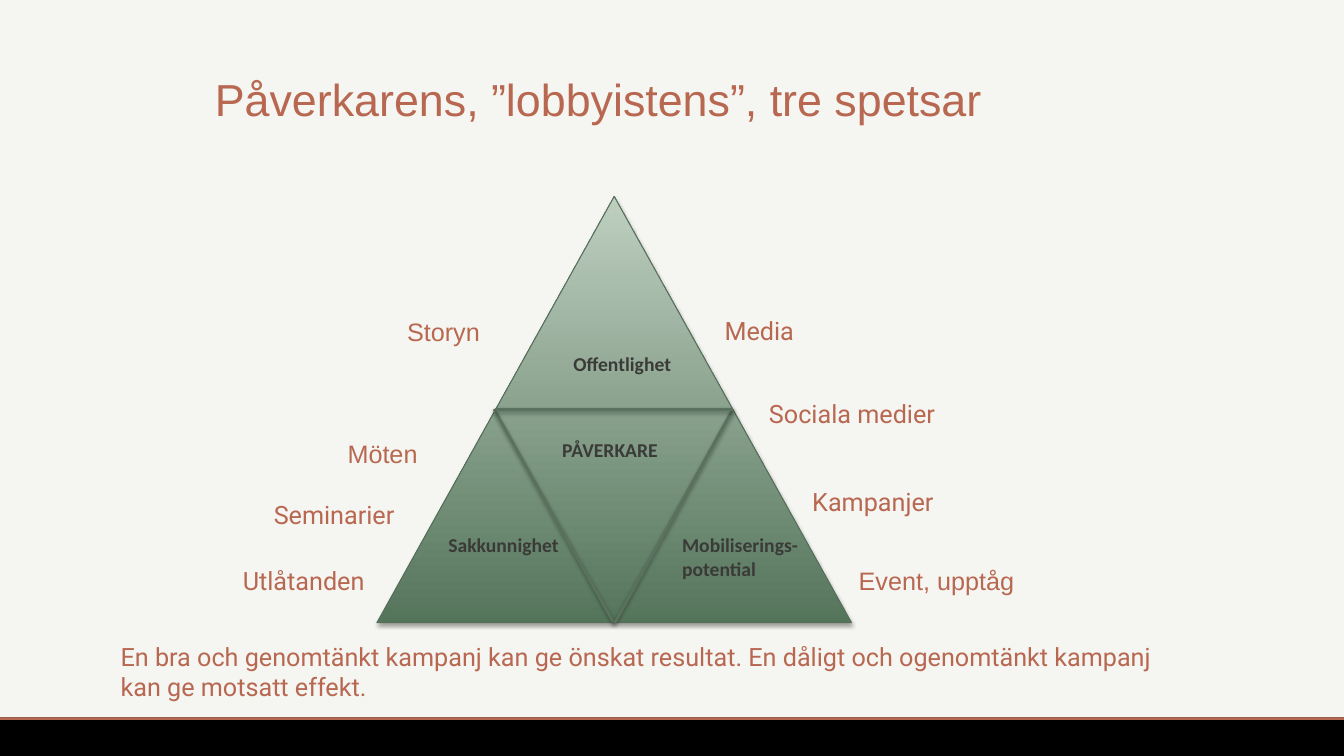
import lxml.etree
import pptx
import pptx.dml.color
import pptx.enum.dml
import pptx.enum.shapes
import pptx.enum.text
import pptx.oxml.ns
import pptx.util

Cm = pptx.util.Cm
Pt = pptx.util.Pt
RGBColor = pptx.dml.color.RGBColor
MSO_SHAPE = pptx.enum.shapes.MSO_SHAPE

PAPER = RGBColor(0xF5, 0xF5, 0xF1)
BLACK = RGBColor(0x00, 0x00, 0x00)
RUST = RGBColor(0xB8, 0x68, 0x51)
CHARCOAL = RGBColor(0x3A, 0x3A, 0x37)
DARK_GREEN = RGBColor(0x55, 0x75, 0x5B)
PALE_GREEN = RGBColor(0xBE, 0xCF, 0xC0)
EDGE_GREEN = RGBColor(0x56, 0x6F, 0x5B)
DIVIDER_GREEN = RGBColor(0x59, 0x71, 0x5D)


def cast_shadow(shape, opacity, distance):
    """Give the shape a soft black shadow straight below; opacity is in percent."""
    qn = pptx.oxml.ns.qn
    effects = lxml.etree.SubElement(shape._element.spPr, qn("a:effectLst"))
    shadow = lxml.etree.SubElement(
        effects, qn("a:outerShdw"), blurRad=str(Pt(3.1)), dist=str(Pt(distance)),
        dir="5400000", rotWithShape="0")
    color = lxml.etree.SubElement(shadow, qn("a:srgbClr"), val=str(BLACK))
    lxml.etree.SubElement(color, qn("a:alpha"), val=str(opacity * 1000))


def add_text(shapes, lines, left, top, width, height, font, size, color, bold=False, wrap=True):
    box = shapes.add_textbox(Cm(left), Cm(top), Cm(width), Cm(height))
    frame = box.text_frame
    frame.word_wrap = wrap
    frame.auto_size = pptx.enum.text.MSO_AUTO_SIZE.SHAPE_TO_FIT_TEXT
    for index, line in enumerate(lines):
        para = frame.add_paragraph() if index else frame.paragraphs[0]
        span = para.add_run()
        span.text = line
        span.font.name = font
        span.font.size = Pt(size)
        span.font.bold = bold
        span.font.color.rgb = color


deck = pptx.Presentation()
deck.slide_width = Cm(33.87)
deck.slide_height = Cm(19.05)
page = deck.slides.add_slide(deck.slide_layouts[5])
page.background.fill.solid()
page.background.fill.fore_color.rgb = PAPER

# Bottom band with its thin rust edge
for height, color in ((0.97, BLACK), (0.06, RUST)):
    band = page.shapes.add_shape(MSO_SHAPE.RECTANGLE, 0, Cm(18.08), deck.slide_width, Cm(height))
    band.shadow.inherit = False
    band.fill.solid()
    band.fill.fore_color.rgb = color
    band.line.fill.background()

title = page.shapes.title
title.left, title.top, title.width, title.height = Cm(5.16), Cm(1.68), Cm(20.68), Cm(1.63)
title.text_frame.vertical_anchor = pptx.enum.text.MSO_ANCHOR.MIDDLE
title_para = title.text_frame.paragraphs[0]
title_para.alignment = pptx.enum.text.PP_ALIGN.LEFT
title_span = title_para.add_run()
title_span.text = "Påverkarens, ”lobbyistens”, tre spetsar"
title_span.font.name = "Arial"
title_span.font.size = Pt(32)
title_span.font.color.rgb = RUST

# Pyramid
pyramid = page.shapes.add_group_shape().shapes
triangle = pyramid.add_shape(
    MSO_SHAPE.ISOSCELES_TRIANGLE, Cm(9.5), Cm(4.95), Cm(11.96), Cm(10.74))
triangle.adjustments[0] = 0.5
triangle.fill.gradient()
triangle.fill.gradient_angle = 90
for stop, color in zip(triangle.fill.gradient_stops, (DARK_GREEN, PALE_GREEN)):
    stop.color.rgb = color
triangle.line.color.rgb = EDGE_GREEN
triangle.line.width = Pt(0.75)
cast_shadow(triangle, 35, 1.8)

dividers = (
    (12.45, 10.31, 15.47, 15.7),
    (18.47, 10.31, 15.49, 15.7),
    (12.5, 10.31, 18.47, 10.31),
)
for ends in dividers:
    divider = pyramid.add_connector(
        pptx.enum.shapes.MSO_CONNECTOR.STRAIGHT, *(Cm(end) for end in ends))
    divider.line.color.rgb = DIVIDER_GREEN
    divider.line.width = Pt(2)
    cast_shadow(divider, 38, 1.6)

inner_labels = (
    (["PÅVERKARE"], 13.92, 10.92, 2.95, 0.86),
    (["Offentlighet"], 14.2, 8.74, 3.05, 0.86),
    (["Sakkunnighet"], 11.05, 13.31, 3.33, 0.86),
    (["Mobiliserings-", "potential"], 16.94, 13.31, 3.45, 1.45),
)
for label in inner_labels:
    add_text(pyramid, *label, "Calibri", 14, CHARCOAL, bold=True, wrap=False)

outer_labels = (
    ("Utlåtanden", 5.87, 14.12, 4.42, "Roboto"),
    ("Seminarier", 6.65, 12.47, 3.76, "Roboto"),
    ("Möten", 8.51, 10.92, 3.28, "Arial"),
    ("Storyn", 10.01, 7.85, 2.97, "Arial"),
    ("Media", 18.01, 7.82, 2.87, "Roboto"),
    ("Sociala medier", 19.13, 9.91, 5.69, "Roboto"),
    ("Kampanjer", 20.22, 12.12, 4.7, "Roboto"),
    ("Event, upptåg", 21.39, 14.12, 6.05, "Arial"),
)
for label, left, top, width, font in outer_labels:
    add_text(pyramid, [label], left, top, width, 1.02, font, 18, RUST)

conclusion = ("En bra och genomtänkt kampanj kan ge önskat resultat. "
              "En dåligt och ogenomtänkt kampanj kan ge motsatt effekt.")
add_text(page.shapes, [conclusion], 2.79, 16.03, 26.95, 1.8, "Roboto", 18, RUST)

deck.save("out.pptx")
